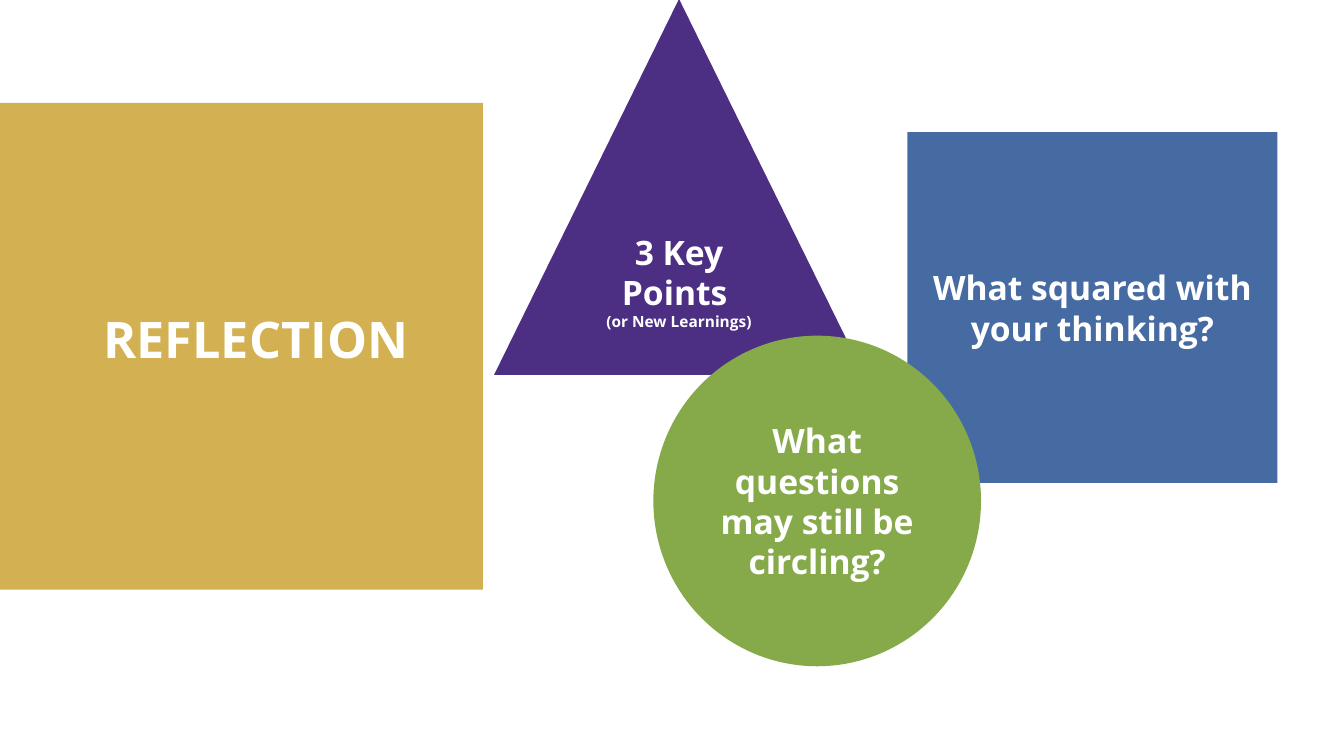
from pptx import Presentation
from pptx.dml.color import RGBColor
from pptx.enum.shapes import MSO_SHAPE as Shape
from pptx.enum.text import MSO_ANCHOR as Anchor, MSO_AUTO_SIZE as AutoSize, PP_ALIGN as Align
from pptx.util import Inches, Pt

PX = Inches(1) // 100
COLORS = {
    "gold": "D3B051",
    "blue": "466BA3",
    "purple": "4C2F83",
    "green": "86AA4A",
    "white": "FFFFFF",
}


def add_block(kind, color, left, top, width, height):
    block = page.shapes.add_shape(kind, left * PX, top * PX, width * PX, height * PX)
    block.shadow.inherit = False
    block.fill.solid()
    block.fill.fore_color.rgb = RGBColor.from_string(COLORS[color])
    block.line.fill.background()
    return block


def write_lines(box, lines, align):
    frame = box.text_frame
    frame.word_wrap = True
    frame.auto_size = AutoSize.NONE
    frame.vertical_anchor = Anchor.MIDDLE
    for index, (text, size) in enumerate(lines):
        para = frame.paragraphs[0] if index == 0 else frame.add_paragraph()
        para.text = text
        para.alignment = align
        para.font.name = "Open Sans"
        para.font.size = Pt(size)
        para.font.bold = True
        para.font.color.rgb = RGBColor.from_string(COLORS["white"])


deck = Presentation()
deck.slide_width = 1333 * PX
deck.slide_height = 750 * PX
page = deck.slides.add_slide(deck.slide_layouts[5])

panel = add_block(Shape.RECTANGLE, "gold", 0, 102, 479, 483)
title = page.shapes.title
title._element.addprevious(panel._element)
title.left, title.top, title.width, title.height = 43 * PX, 131 * PX, 372 * PX, 417 * PX
write_lines(title, [("REFLECTION", 36)], Align.RIGHT)
title.text_frame.paragraphs[0].line_spacing = 0.9

prompts = [
    (Shape.RECTANGLE, "blue", (900, 131, 367, 348), [("What squared with your thinking?", 24)]),
    (Shape.ISOSCELES_TRIANGLE, "purple", (490, -1, 367, 373),
     [("3 Key Points ", 24), ("(or New Learnings)", 11)]),
    (Shape.OVAL, "green", (648, 333, 325, 328), [("What questions may still be circling?", 24)]),
]
for kind, color, place, lines in prompts:
    write_lines(add_block(kind, color, *place), lines, Align.CENTER)

deck.save("out.pptx")
